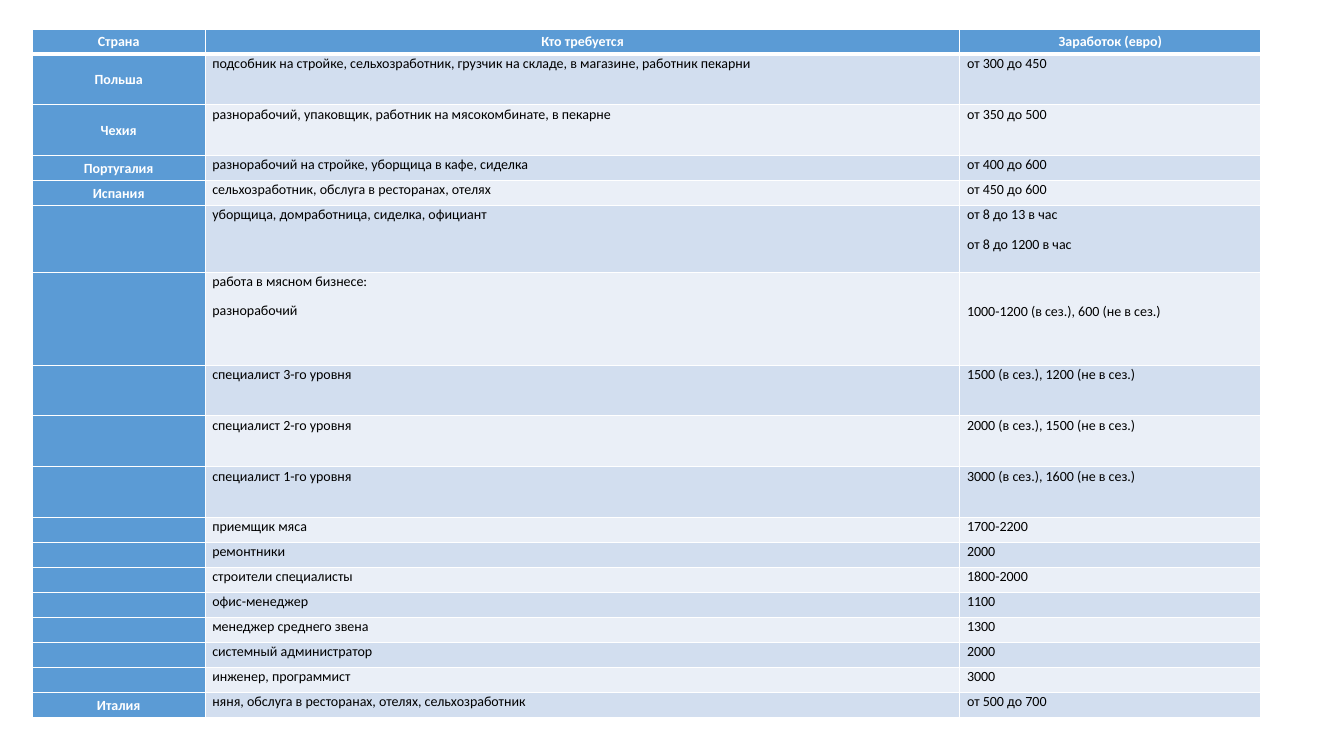
from lxml.etree import SubElement
from pptx import Presentation
from pptx.dml.color import RGBColor
from pptx.enum.text import MSO_ANCHOR as Anchor, PP_ALIGN as Align
from pptx.oxml.ns import qn
from pptx.util import Cm, Pt


def color(value):
    return RGBColor.from_string(value)


def write(cell, text, align=Align.JUSTIFY, ink="000000", bold=False, size=10):
    frame = cell.text_frame
    for index, line in enumerate(text.split("\n")):
        paragraph = frame.add_paragraph() if index else frame.paragraphs[0]
        paragraph.alignment = align
        paragraph.line_spacing = 1.07
        paragraph.space_after = Pt(8)
        if not line:
            SubElement(paragraph._p, qn("a:endParaRPr"), sz=str(size * 100))
            continue
        run = paragraph.add_run()
        run.text = line
        run.font.name = "Calibri"
        run.font.size = Pt(size)
        run.font.bold = bold
        run.font.color.rgb = color(ink)


BLUE, DARK_BAND, LIGHT_BAND, WHITE = "5B9BD5", "D2DEEF", "EAEFF7", "FFFFFF"
SINGLE, DOUBLE = 0.63, 1.28
MEAT_ROW = 6
LEFT_ALIGNED_PAY = range(6, 12)

vacancies = [
    ("Страна", "Кто требуется", "Заработок (евро)", SINGLE),
    ("Польша", "подсобник на стройке, сельхозработник, грузчик на складе, в магазине, работник пекарни",
     "от 300 до 450", DOUBLE),
    ("Чехия", "разнорабочий, упаковщик, работник на мясокомбинате, в пекарне", "от 350 до 500", DOUBLE),
    ("Португалия", "разнорабочий на стройке, уборщица в кафе, сиделка", "от 400 до 600", SINGLE),
    ("Испания", "сельхозработник, обслуга в ресторанах, отелях", "от 450 до 600", SINGLE),
    ("", "уборщица, домработница, сиделка, официант", "от 8 до 13 в час\nот 8 до 1200 в час", 1.68),
    ("", "работа в мясном бизнесе:\nразнорабочий", "1000-1200 (в сез.), 600 (не в сез.)", 2.34),
    ("", "специалист 3-го уровня", "1500 (в сез.), 1200 (не в сез.)", DOUBLE),
    ("", "специалист 2-го уровня", "2000 (в сез.), 1500 (не в сез.)", DOUBLE),
    ("", "специалист 1-го уровня", "3000 (в сез.), 1600 (не в сез.)", DOUBLE),
    ("", "приемщик мяса", "1700-2200", SINGLE),
    ("", "ремонтники", "2000", SINGLE),
    ("", "строители специалисты", "1800-2000", SINGLE),
    ("", "офис-менеджер", "1100", SINGLE),
    ("", "менеджер среднего звена", "1300", SINGLE),
    ("", "системный администратор", "2000", SINGLE),
    ("", "инженер, программист", "3000", SINGLE),
    ("Италия", "няня, обслуга в ресторанах, отелях, сельхозработник", "от 500 до 700", SINGLE),
]
column_widths = [4.36, 19.02, 7.58]

prs = Presentation()
prs.slide_width, prs.slide_height = Cm(33.87), Cm(19.05)
slide = prs.slides.add_slide(prs.slide_layouts[6])

total_height = sum(height for *_, height in vacancies)
jobs = slide.shapes.add_table(len(vacancies), len(column_widths), Cm(0.81), Cm(0.73),
                              Cm(sum(column_widths)), Cm(total_height)).table
for column, width in zip(jobs.columns, column_widths):
    column.width = Cm(width)

for r, (*texts, height) in enumerate(vacancies):
    jobs.rows[r].height = Cm(height)
    for c, text in enumerate(texts):
        cell = jobs.cell(r, c)
        heading = r == 0 or c == 0
        cell.margin_left = cell.margin_right = Cm(0.18)
        cell.margin_top = cell.margin_bottom = 0
        if heading:
            cell.vertical_anchor = Anchor.MIDDLE
            write(cell, text, align=Align.CENTER, ink=WHITE, bold=True)
        elif c == 2 and r in LEFT_ALIGNED_PAY:
            write(cell, text, align=Align.LEFT)
        else:
            write(cell, text)
        if (r, c) == (MEAT_ROW, 2):
            cell.margin_top = Cm(0.74)

        properties = cell._tc.get_or_add_tcPr()
        for side in ("lnL", "lnR", "lnT", "lnB"):
            under_header = (r, side) in ((0, "lnB"), (1, "lnT"))
            border = SubElement(properties, qn(f"a:{side}"), w=str(Pt(3 if under_header else 1)))
            SubElement(SubElement(border, qn("a:solidFill")), qn("a:srgbClr"), val=WHITE)
        cell.fill.solid()
        cell.fill.fore_color.rgb = color(BLUE if heading else DARK_BAND if r % 2 else LIGHT_BAND)

prs.save("out.pptx")
